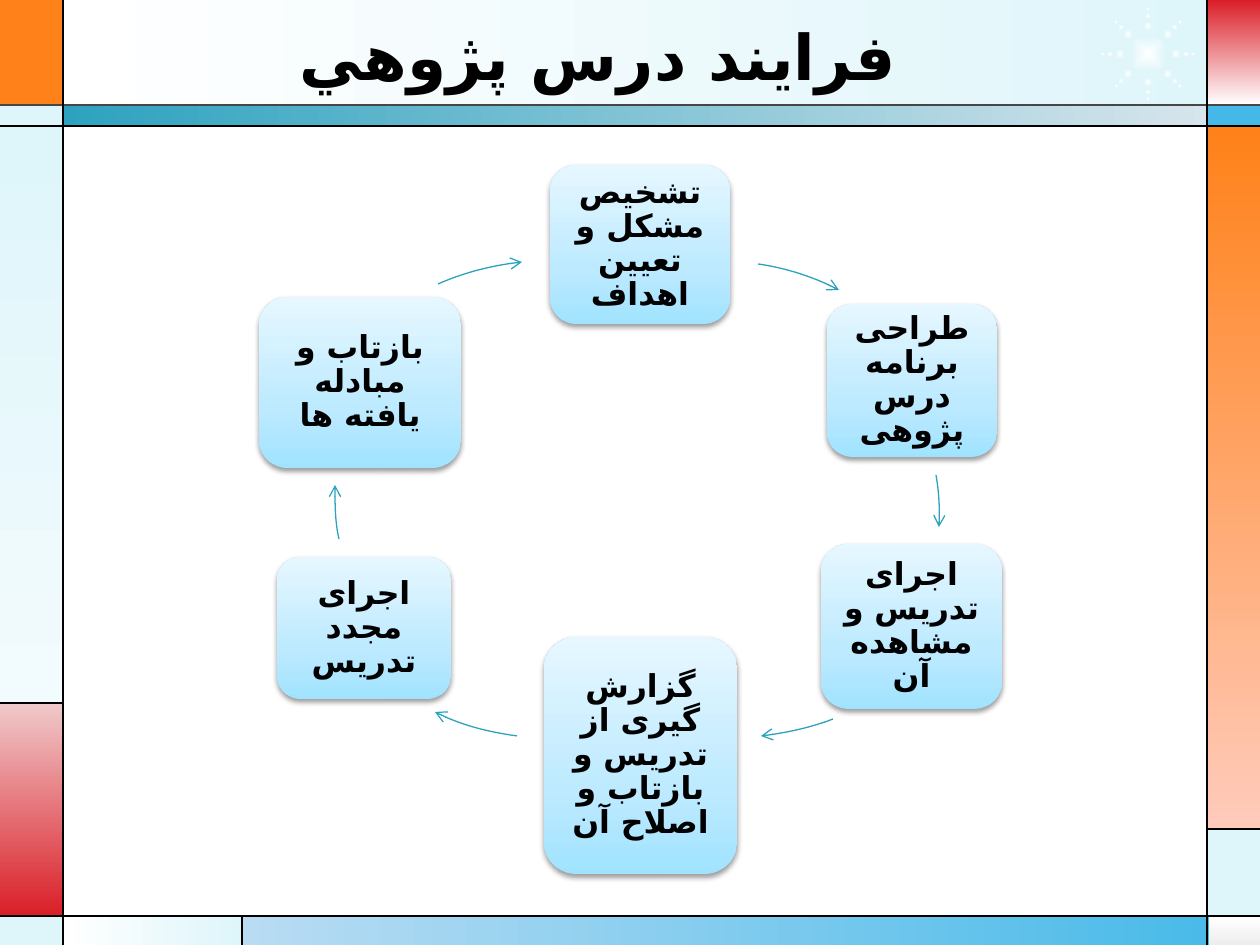
import math

import lxml.etree
import pptx
import pptx.dml.color
import pptx.enum.shapes
import pptx.enum.text
import pptx.oxml.ns
import pptx.util

PX = 914400 / 126
FONT = "DejaVu Sans"
COLORS = {
    "white": "FFFFFF", "black": "000000", "gray": "464646", "silver": "EDEDED",
    "ice": "DEF5FA", "frost": "F2FBFD", "orange": "FF8119", "peach": "FFCBBB",
    "red": "DA1F28", "rose": "F0C9CA", "sky": "44B9E8", "mist": "B9DCF3",
    "teal": "2DA2BF", "haze": "D7E5EC",
    "node_low": "A1E3FF", "node_mid": "BDEAFF", "node_high": "E6F7FF",
}
BANDS = [
    ((63, 0, 1168, 106), ["white", "ice"], 0),
    ((0, 0, 63, 106), ["orange"], 0),
    ((0, 105, 63, 21), ["ice"], 0),
    ((0, 126, 63, 577), ["ice", "frost"], 90),
    ((0, 703, 63, 213), ["rose", "red"], 90),
    ((0, 917, 63, 28), ["ice"], 0),
    ((63, 916, 180, 29), ["white", "ice"], 0),
    ((242, 916, 1018, 29), ["mist", "sky"], 0),
    ((1209, 917, 51, 28), ["white", "silver"], 90),
    ((1208, 829, 52, 88), ["ice"], 0),
    ((1207, 126, 53, 703), ["orange", "peach"], 90),
    ((1207, 105, 53, 21), ["sky"], 0),
    ((1208, 0, 52, 105), ["red", "white"], 90),
    ((63, 105, 1145, 21), ["teal", "haze"], 0),
]
RULES = [
    ((0, 105, 1260, 105), "gray"),
    ((0, 126, 1260, 126), "black"),
    ((0, 916, 1260, 916), "black"),
    ((63, 0, 63, 945), "black"),
    ((1207, 0, 1207, 945), "black"),
    ((63, 703, 0, 703), "black"),
    ((242, 916, 242, 945), "black"),
    ((1207, 829, 1260, 829), "black"),
]
STEPS = [
    ("تشخيص مشکل و تعيين اهداف", (550, 165, 180, 159),
     [(758, 264), (786, 268), (814, 277), (839, 290)]),
    ("طراحی برنامه درس پژوهی", (827, 304, 170, 153),
     [(936, 475), (939, 491), (940, 509), (939, 527)]),
    ("اجرای تدريس و مشاهده آن", (821, 544, 181, 165),
     [(833, 719), (810, 728), (785, 733), (761, 736)]),
    ("گزارش گيری از تدريس و بازتاب و اصلاح آن", (544, 637, 193, 237),
     [(517, 736), (488, 732), (460, 725), (435, 712)]),
    ("اجرای مجدد تدریس", (277, 557, 174, 142),
     [(339, 539), (335, 522), (335, 504), (335, 485)]),
    ("بازتاب و مبادله يافته ها", (259, 297, 202, 171),
     [(438, 284), (465, 272), (494, 265), (522, 262)]),
]


def emu(*lengths):
    return [round(length * PX) for length in lengths]


def color(name):
    return pptx.dml.color.RGBColor.from_string(COLORS[name])


def add_xml(parent, tag, **attributes):
    return lxml.etree.SubElement(parent, pptx.oxml.ns.qn(tag), attributes)


def find_xml(shape, tag):
    return shape.element.spPr.find(pptx.oxml.ns.qn(tag))


def write_text(frame, text, size=18, rtl=False, spacing=None):
    frame.word_wrap = True
    frame.vertical_anchor = pptx.enum.text.MSO_ANCHOR.MIDDLE
    para = frame.paragraphs[0]
    para.alignment = pptx.enum.text.PP_ALIGN.CENTER
    para.line_spacing = spacing
    if rtl:
        para._p.get_or_add_pPr().set("rtl", "1")
    span = para.add_run()
    span.text = text
    span.font.size = pptx.util.Pt(size)
    span.font.bold = True
    span.font.name = FONT
    span.font.color.rgb = color("black")
    add_xml(span._r.get_or_add_rPr(), "a:cs", typeface=FONT)


class Painter:
    """Draws styled elements on the current slide."""

    def __init__(self, page):
        self.page = page
        self.line_width = pptx.util.Pt(0.75)

    def shape(self, kind, box, names, angle=0, stops=(0, 100), radial=False):
        shape = self.page.shapes.add_shape(kind, *emu(*box))
        shape.shadow.inherit = False
        shape.line.fill.background()
        if len(names) == 1:
            shape.fill.solid()
            shape.fill.fore_color.rgb = color(names[0])
            return shape
        shape.fill.gradient()
        gradient = find_xml(shape, "a:gradFill")
        for child in list(gradient):
            gradient.remove(child)
        stop_list = add_xml(gradient, "a:gsLst")
        for name, stop in zip(names, stops):
            mark = add_xml(stop_list, "a:gs", pos=str(stop * 1000))
            add_xml(mark, "a:srgbClr", val=COLORS[name])
        if radial:
            track = add_xml(gradient, "a:path", path="shape")
            add_xml(track, "a:fillToRect", l="50000", t="50000", r="50000", b="50000")
        else:
            add_xml(gradient, "a:lin", ang=str(angle * 60000), scaled="0")
        return shape

    def band(self, box, names, angle):
        self.shape(pptx.enum.shapes.MSO_SHAPE.RECTANGLE, box, names, angle)

    def dot(self, x, y, size):
        box = (x - size / 2, y - size / 2, size, size)
        self.shape(pptx.enum.shapes.MSO_SHAPE.OVAL, box, ["white", "ice"], radial=True)

    def sunburst(self, x, y):
        self.dot(x, y, 38)
        for ray in range(8):
            angle = math.radians(45 * ray)
            for radius, size in ((38, 6), (45, 4), (28, 9)):
                self.dot(x + radius * math.cos(angle), y + radius * math.sin(angle), size)

    def rule(self, ends, name):
        kind = pptx.enum.shapes.MSO_CONNECTOR.STRAIGHT
        rule = self.page.shapes.add_connector(kind, *emu(*ends))
        rule.line.color.rgb = color(name)
        rule.line.width = self.line_width
        add_xml(rule.element.spPr, "a:effectLst")

    def title(self, text, box):
        title = self.page.shapes.title
        title.left, title.top, title.width, title.height = emu(*box)
        write_text(title.text_frame, text, size=36)
        title.element.getparent().append(title.element)

    def node(self, text, box):
        node = self.shape(pptx.enum.shapes.MSO_SHAPE.ROUNDED_RECTANGLE, box,
                          ["node_low", "node_mid", "node_high"], 270, (0, 35, 100))
        shadow = add_xml(find_xml(node, "a:effectLst"), "a:outerShdw",
                         blurRad="39370", dist="20320", dir="5400000", rotWithShape="0")
        shade = add_xml(shadow, "a:srgbClr", val=COLORS["black"])
        add_xml(shade, "a:alpha", val="38000")
        frame = node.text_frame
        for side in ("left", "right", "top", "bottom"):
            setattr(frame, f"margin_{side}", emu(9)[0])
        write_text(frame, text, rtl=True, spacing=0.9)

    def arrow(self, controls, pieces=16):
        points = []
        for index in range(pieces + 1):
            t = index / pieces
            weights = [math.comb(3, k) * t**k * (1 - t)**(3 - k) for k in range(4)]
            points.append(emu(*(sum(w * c[axis] for w, c in zip(weights, controls))
                                for axis in range(2))))
        builder = self.page.shapes.build_freeform(*points[0], scale=1.0)
        builder.add_line_segments(points[1:], close=False)
        arrow = builder.convert_to_shape()
        arrow.shadow.inherit = False
        arrow.fill.background()
        arrow.line.color.rgb = color("teal")
        arrow.line.width = self.line_width
        add_xml(find_xml(arrow, "a:ln"), "a:tailEnd", type="arrow")


def main():
    deck = pptx.Presentation()
    deck.slide_width, deck.slide_height = emu(1260, 945)
    painter = Painter(deck.slides.add_slide(deck.slide_layouts[5]))
    for box, names, angle in BANDS:
        painter.band(box, names, angle)
    painter.sunburst(1148, 54)
    for ends, name in RULES:
        painter.rule(ends, name)
    painter.title("فرايند درس پژوهي", (136, 16, 924, 78))
    for text, box, controls in STEPS:
        painter.node(text, box)
        painter.arrow(controls)
    deck.save("out.pptx")


if __name__ == "__main__":
    main()
